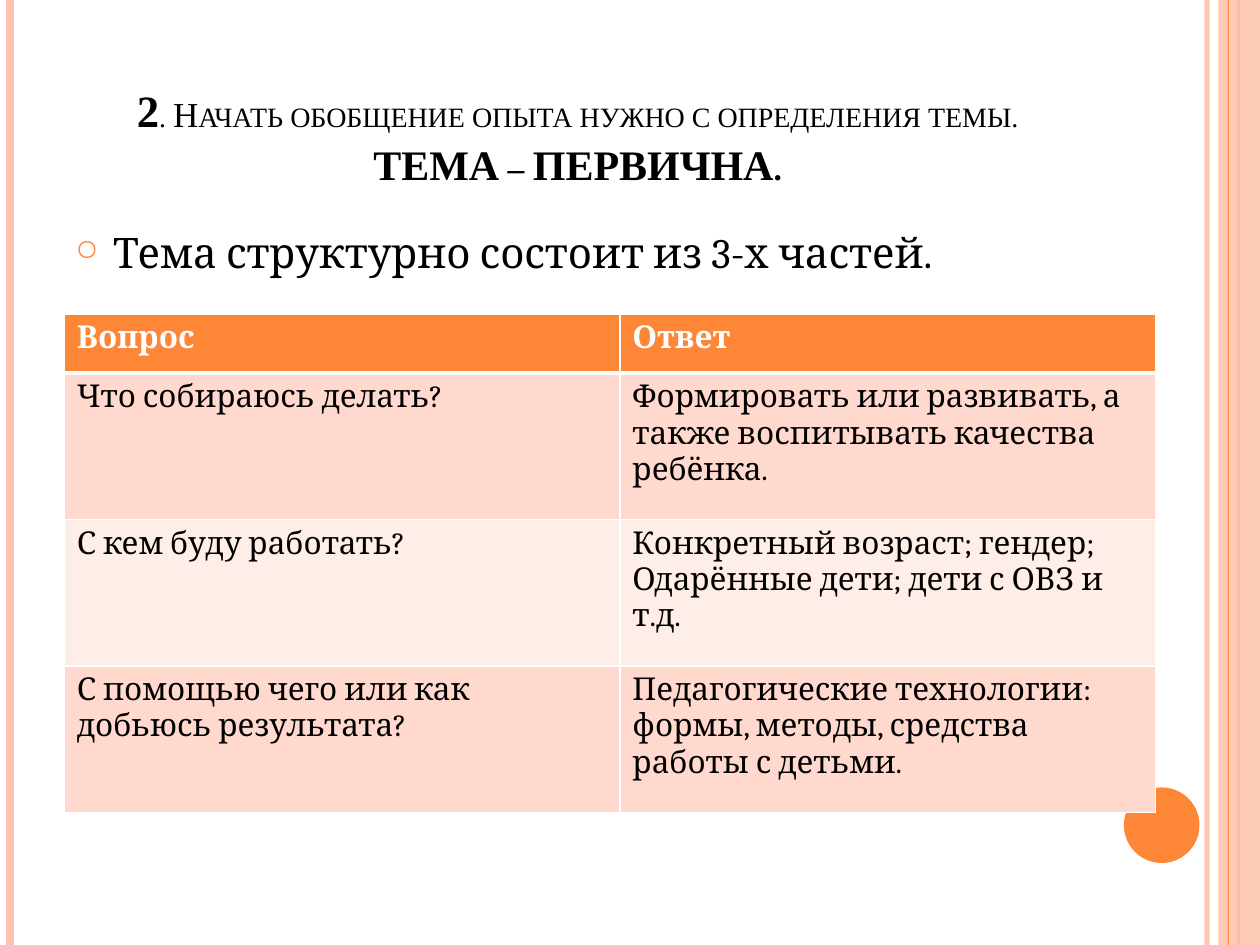
from dataclasses import dataclass

from lxml.etree import SubElement
from pptx import Presentation
from pptx.dml.color import RGBColor
from pptx.enum.shapes import MSO_CONNECTOR as Connector, MSO_SHAPE as Shape
from pptx.enum.text import MSO_ANCHOR as Anchor, PP_ALIGN as Align
from pptx.oxml import parse_xml
from pptx.oxml.ns import nsdecls, qn
from pptx.util import Inches, Pt

COLORS = {
    "accent": "FE8637",
    "stripe": "FEC3AE",
    "band_dark": "FFD9CE",
    "band_light": "FFEDE8",
    "white": "FFFFFF",
    "black": "000000",
}
WIDTH, HEIGHT = Inches(10), Inches(7.5)


@dataclass(frozen=True)
class Stripe:
    x: float
    weight: float
    color: str
    opacity: int = 100


@dataclass(frozen=True)
class Area:
    left: float
    top: float
    width: float
    height: float

    def emu(self) -> tuple[int, int, int, int]:
        return across(self.left), down(self.top), across(self.width), down(self.height)


@dataclass(frozen=True)
class Phrase:
    text: str
    size: float
    bold: bool
    ends_line: bool = False


STRIPES = [
    Stripe(95.8, 3, "stripe", 93),
    Stripe(0.8, 4.5, "stripe"),
    Stripe(98.3, 1.5, "accent"),
]
INNER_STRIPE = Stripe(97.5, 0.75, "accent")
TITLE = [
    Phrase("2", 32, True),
    Phrase(". Начать обобщение опыта нужно с определения темы.", 20, False, True),
    Phrase("ТЕМА – ПЕРВИЧНА.", 24, True),
]
QUESTIONS = [
    ("Вопрос", "Ответ"),
    ("Что собираюсь делать?",
     "Формировать или развивать, а также воспитывать качества ребёнка."),
    ("С кем буду работать?",
     "Конкретный возраст; гендер; Одарённые дети; дети с ОВЗ и т.д."),
    ("С помощью чего или как добьюсь результата?",
     "Педагогические технологии: формы, методы, средства работы с детьми."),
]
COLUMN_SHARES = (44.1, 42.5)
HEADER_SHARE, ANSWER_SHARE = 6.27, 15.5


def across(percent: float) -> int:
    return round(WIDTH * percent / 100)


def down(percent: float) -> int:
    return round(HEIGHT * percent / 100)


def rgb(color: str) -> RGBColor:
    return RGBColor.from_string(COLORS[color])


def set_opacity(element, percent: int) -> None:
    if percent < 100:
        tone = next(element.iter(qn("a:srgbClr")))
        SubElement(tone, qn("a:alpha"), val=str(percent * 1000))


def draw_stripe(slide, stripe: Stripe) -> None:
    x = across(stripe.x)
    line = slide.shapes.add_connector(Connector.STRAIGHT, x, 0, x, HEIGHT)
    line.line.color.rgb = rgb(stripe.color)
    line.line.width = Pt(stripe.weight)
    properties = line._element.spPr
    set_opacity(properties, stripe.opacity)
    SubElement(properties, qn("a:effectLst"))


def draw_shape(slide, kind: Shape, area: Area, color: str, opacity: int = 100) -> None:
    shape = slide.shapes.add_shape(kind, *area.emu())
    shape.shadow.inherit = False
    shape.fill.solid()
    shape.fill.fore_color.rgb = rgb(color)
    shape.line.fill.background()
    set_opacity(shape._element.spPr, opacity)


def style_font(font, name: str, size: float, color: str, bold: bool = False) -> None:
    font.name = name
    font.size = Pt(size)
    font.bold = bold
    font.color.rgb = rgb(color)


def add_text_frame(slide, area: Area, anchor: Anchor):
    frame = slide.shapes.add_textbox(*area.emu()).text_frame
    frame.word_wrap = True
    frame.vertical_anchor = anchor
    return frame


def draw_title(slide, area: Area, phrases: list[Phrase]) -> None:
    heading = add_text_frame(slide, area, Anchor.BOTTOM).paragraphs[0]
    heading.alignment = Align.CENTER
    for phrase in phrases:
        run = heading.add_run()
        run.text = phrase.text
        style_font(run.font, "Times New Roman", phrase.size, "black", phrase.bold)
        run._r.get_or_add_rPr().set("cap", "small")
        if phrase.ends_line:
            heading.add_line_break()


def draw_bullet(slide, area: Area, text: str) -> None:
    point = add_text_frame(slide, area, Anchor.TOP).paragraphs[0]
    point.text = text
    point.space_before = Pt(6)
    style_font(point.runs[0].font, "Cambria", 24, "black")
    properties = point._p.get_or_add_pPr()
    properties.set("marL", str(Inches(0.3)))
    properties.set("indent", str(-Inches(0.3)))
    bullet_color = SubElement(properties, qn("a:buClr"))
    SubElement(bullet_color, qn("a:srgbClr"), val=COLORS["accent"])
    SubElement(properties, qn("a:buSzPct"), val="70000")
    SubElement(properties, qn("a:buChar"), char="○")


def set_borders(cell, top: float, bottom: float) -> None:
    properties = cell._tc.get_or_add_tcPr()
    weights = {"lnL": 1, "lnR": 1, "lnT": top, "lnB": bottom}
    for position, (side, weight) in enumerate(weights.items()):
        properties.insert(position, parse_xml(
            f'<a:{side} {nsdecls("a")} w="{Pt(weight)}"><a:solidFill>'
            f'<a:srgbClr val="{COLORS["white"]}"/></a:solidFill></a:{side}>'))


def draw_questions(slide, area: Area) -> None:
    table = slide.shapes.add_table(
        len(QUESTIONS), len(COLUMN_SHARES), *area.emu()).table
    table.first_row = table.horz_banding = False
    for column, share in zip(table.columns, COLUMN_SHARES):
        column.width = across(share)
    for index, texts in enumerate(QUESTIONS):
        is_header = index == 0
        table.rows[index].height = down(HEADER_SHARE if is_header else ANSWER_SHARE)
        band = "accent" if is_header else "band_dark" if index % 2 else "band_light"
        for cell, text in zip(table.rows[index].cells, texts):
            cell.text_frame.text = text
            style_font(cell.text_frame.paragraphs[0].runs[0].font, "Cambria", 18,
                       "white" if is_header else "black", is_header)
            cell.fill.solid()
            cell.fill.fore_color.rgb = rgb(band)
            set_borders(cell, 3 if index == 1 else 1, 3 if is_header else 1)


def main() -> None:
    deck = Presentation()
    deck.slide_width, deck.slide_height = WIDTH, HEIGHT
    slide = deck.slides.add_slide(deck.slide_layouts[6])
    for stripe in STRIPES:
        draw_stripe(slide, stripe)
    draw_shape(slide, Shape.RECTANGLE, Area(96.7, 0, 3.3, 100), "stripe", 87)
    draw_stripe(slide, INNER_STRIPE)
    draw_shape(slide, Shape.OVAL, Area(89.2, 83.33, 6, 8), "accent")
    draw_title(slide, Area(5, 4, 81.7, 16.67), TITLE)
    draw_bullet(slide, Area(5, 23.33, 81.7, 71.07),
                "Тема структурно состоит из 3-х частей.")
    draw_questions(slide, Area(5.1, 33.2, sum(COLUMN_SHARES), 52.8))
    deck.save("out.pptx")


if __name__ == "__main__":
    main()
